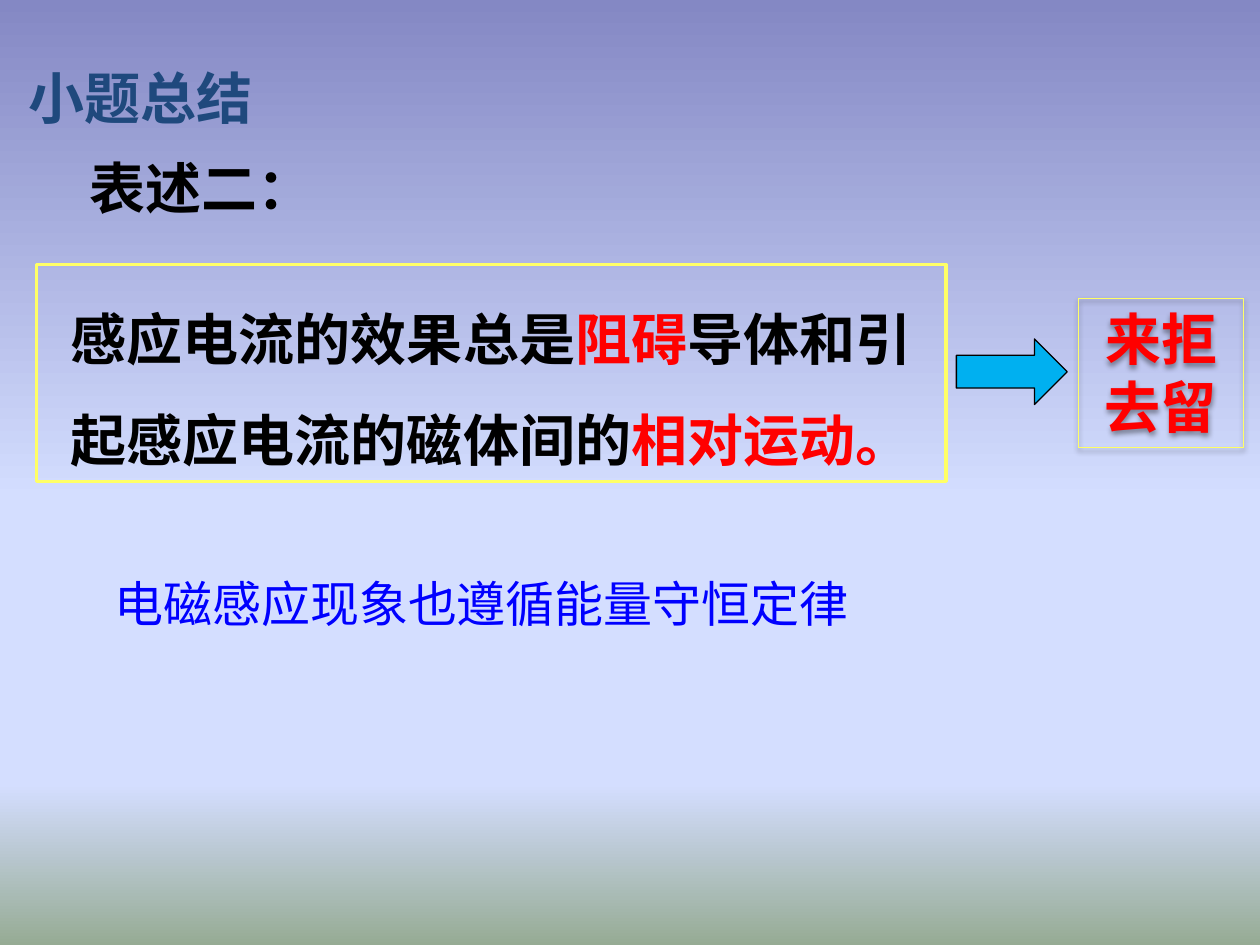
from lxml import etree
from pptx import Presentation
from pptx.dml.color import RGBColor
from pptx.enum.shapes import MSO_SHAPE
from pptx.enum.text import MSO_ANCHOR, MSO_AUTO_SIZE, PP_ALIGN
from pptx.oxml.ns import qn
from pptx.util import Inches, Pt

RECT = MSO_SHAPE.RECTANGLE
ARROW = MSO_SHAPE.RIGHT_ARROW
TOP = MSO_ANCHOR.TOP
GROW = MSO_AUTO_SIZE.SHAPE_TO_FIT_TEXT
LEFT = PP_ALIGN.LEFT
CENTER = PP_ALIGN.CENTER

HAN = "Noto Sans CJK SC"
BLACK, RED, YELLOW = "000000", "FF0000", "FFFF66"
SKY = [(0, "8488C4"), (53, "D4DEFF"), (83, "D4DEFF"), (100, "96AB94")]
BOLD = {"name": HAN, "size": Pt(32), "bold": True}
PLAIN = {"name": "Arial", "size": Pt(28), "bold": False}
FRAME = {"word_wrap": True, "auto_size": GROW, "vertical_anchor": TOP}


def color(value):
    return RGBColor.from_string(value)


def apply(target, values):
    for key, value in values.items():
        setattr(target, key, value)


def place(shape, box):
    names = ("left", "top", "width", "height")
    apply(shape, dict(zip(names, map(Inches, box))))


def add_node(parent, tag, **values):
    node = etree.SubElement(parent, qn(tag))
    for key, value in values.items():
        node.set(key, str(value))
    return node


def paint_sky(slide):
    fill = slide.background.fill
    fill.gradient()
    fill.gradient_angle = 270
    stops = slide.element.find(".//" + qn("a:gsLst"))
    for stop in list(stops):
        stops.remove(stop)
    for spot, value in SKY:
        stop = add_node(stops, "a:gs", pos=spot * 1000)
        add_node(stop, "a:srgbClr", val=value)


def write(shape, runs, font=BOLD, align=LEFT, space=1.0):
    frame = shape.text_frame
    apply(frame, FRAME)
    para = frame.paragraphs[0]
    apply(para, {"alignment": align, "line_spacing": space})
    for text, value in runs:
        run = para.add_run()
        run.text = text
        apply(run.font, font)
        run.font.color.rgb = color(value)
        add_node(run.font._element, "a:ea", typeface=HAN)


def add_form(slide, kind, box, line, width, fill=None):
    shape = slide.shapes.add_shape(kind, *map(Inches, box))
    shape.shadow.inherit = False
    shape.line.color.rgb = color(line)
    shape.line.width = Pt(width)
    if fill:
        shape.fill.solid()
        shape.fill.fore_color.rgb = color(fill)
    else:
        shape.fill.background()
    return shape


def add_label(slide, box, runs, **style):
    label = slide.shapes.add_textbox(*map(Inches, box))
    write(label, runs, **style)


def add_shade(shape):
    effects = shape._element.spPr.find(qn("a:effectLst"))
    shade = add_node(effects, "a:outerShdw", blurRad=Pt(3.1), dist=Pt(1.6),
                     dir=5400000, rotWithShape=0)
    tint = add_node(shade, "a:srgbClr", val=BLACK)
    add_node(tint, "a:alpha", val=38000)


def main():
    deck = Presentation()
    apply(deck, {"slide_width": Inches(10), "slide_height": Inches(7.5)})
    slide = deck.slides.add_slide(deck.slide_layouts[5])
    paint_sky(slide)

    title = slide.shapes.title
    place(title, (0.13, 0.45, 5.24, 0.64))
    write(title, [("小题总结", "1F497D")])
    add_label(slide, (0.61, 1.17, 2.17, 0.64), [("表述二：", BLACK)])

    law = add_form(slide, RECT, (0.29, 2.1, 7.22, 1.72), YELLOW, 2)
    write(law, [("感应电流的效果总是", BLACK), ("阻碍", RED),
                ("导体和引起感应电流的磁体间的", BLACK), ("相对运动。", RED)],
          align=CENTER, space=1.5)

    motto = add_form(slide, RECT, (8.56, 2.37, 1.31, 1.18), YELLOW, 0.75)
    write(motto, [("来拒去留", RED)], align=CENTER)
    add_shade(motto)

    add_form(slide, ARROW, (7.59, 2.69, 0.88, 0.52), BLACK, 0.75, "00B0F0")
    add_label(slide, (0.81, 4.36, 6.18, 0.71),
              [("电磁感应现象也遵循能量守恒定律", "0000FF")], font=PLAIN, space=1.3)
    deck.save("out.pptx")


if __name__ == "__main__":
    main()
